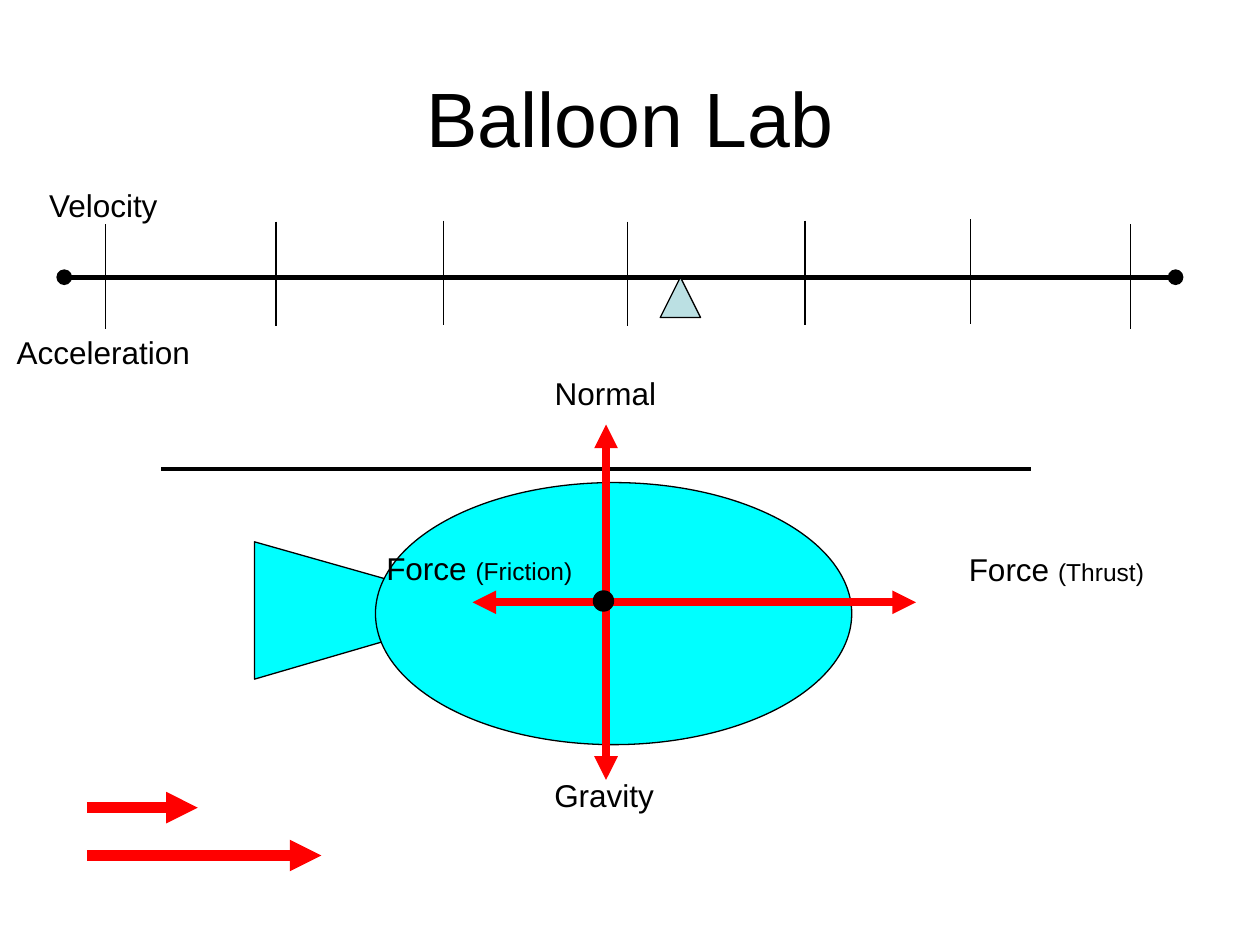
import pptx
import pptx.util
import pptx.dml.color
import pptx.enum.shapes
import pptx.enum.text
import pptx.oxml

COLORS = {"ink": "000000", "balloon": "00FFFF", "force": "FF0000", "marker": "BBE0E3"}
SHAPES = pptx.enum.shapes.MSO_SHAPE
CENTER = pptx.enum.text.PP_ALIGN.CENTER
MIDDLE = pptx.enum.text.MSO_ANCHOR.MIDDLE
rgb = {name: pptx.dml.color.RGBColor.from_string(value) for name, value in COLORS.items()}

deck = pptx.Presentation()
deck.slide_width = pptx.util.Inches(10)
deck.slide_height = pptx.util.Inches(7.5)
slide = deck.slides.add_slide(deck.slide_layouts[5])

# Grid: 100 columns by 75 rows
COL = deck.slide_width / 100
ROW = deck.slide_height / 75


def grid(*numbers):
    """Turn alternating columns and rows into lengths."""
    return [round(n * (ROW if i % 2 else COL)) for i, n in enumerate(numbers)]


def add_line(start, end, color, weight, head=None, tail=None):
    line = slide.shapes.add_connector(
        pptx.enum.shapes.MSO_CONNECTOR.STRAIGHT, *grid(*start, *end))
    line.line.color.rgb = rgb[color]
    line.line.width = pptx.util.Pt(weight)
    outline = line.line._get_or_add_ln()
    for tag, kind in (("headEnd", head), ("tailEnd", tail)):
        if kind:
            outline.append(pptx.oxml.parse_xml(
                '<a:%s xmlns:a="http://schemas.openxmlformats.org/drawingml/2006/main" '
                'type="%s"/>' % (tag, kind)))
    line._element.spPr.append(pptx.oxml.parse_xml(
        '<a:effectLst xmlns:a="http://schemas.openxmlformats.org/drawingml/2006/main"/>'))


# Title
title = slide.shapes.title
title.left, title.top, title.width, title.height = grid(5, 3, 90, 12.5)
title.text_frame.text = "Balloon Lab"
title.text_frame.vertical_anchor = MIDDLE
heading = title.text_frame.paragraphs[0]
heading.alignment = CENTER
heading.font.name = "Arial"
heading.font.size = pptx.util.Pt(44)
heading.font.color.rgb = rgb["ink"]

# Balloon: nozzle behind, body in front
nozzle_path = slide.shapes.build_freeform(*grid(20.2, 53.9), scale=1.0)
nozzle_path.add_line_segments(
    [grid(*point) for point in ((32.2, 50.4), (32.2, 46.4), (20.2, 43))], close=True)
nozzle = nozzle_path.convert_to_shape()
body = slide.shapes.add_shape(SHAPES.OVAL, *grid(29.8, 38.3, 37.8, 20.8))

# Ceiling and forces on the balloon
add_line((12.8, 37.2), (81.8, 37.2), "ink", 2.25)
add_line((37.5, 47.8), (72.7, 47.8), "force", 4.5, "triangle", "triangle")
add_line((48.1, 33.7), (48.1, 61.9), "force", 4.5, "triangle", "triangle")
mass_center = slide.shapes.add_shape(SHAPES.OVAL, *grid(47.1, 46.9, 1.6, 1.6))

# Velocity and acceleration scale
add_line((5.1, 22), (93.3, 22), "ink", 3, "oval", "oval")
for column, top in ((8.4, 17.8), (21.9, 17.6), (35.2, 17.5), (49.8, 17.6),
                    (63.9, 17.5), (77, 17.4), (89.7, 17.8)):
    add_line((column, top), (column, top + 8.3), "ink", 0.75)
marker = slide.shapes.add_shape(SHAPES.ISOSCELES_TRIANGLE, *grid(52.4, 22, 3.2, 3.2))

for part, color in ((nozzle, "balloon"), (body, "balloon"),
                    (mass_center, "ink"), (marker, "marker")):
    part.shadow.inherit = False
    part.fill.solid()
    part.fill.fore_color.rgb = rgb[color]
    part.line.color.rgb = rgb["ink"]
    part.line.width = pptx.util.Pt(0.75)

# Comparison arrows
for row, end in ((64.1, 15.7), (67.9, 25.5)):
    add_line((6.9, row), (end, row), "force", 6, tail="triangle")

# Labels: word, smaller note, left, top, width, wrap
for word, note, left, top, width, wrap in (
        ("Velocity", "", 2.7, 14.3, 11, True),
        ("Acceleration", "", 0.3, 25.9, 15.8, True),
        ("Normal", "", 43, 29.2, 10.1, False),
        ("Gravity", "", 43, 61.1, 9.9, False),
        ("Force ", "(Friction)", 26.9, 43.1, 22.3, True),
        ("Force ", "(Thrust)", 72.7, 43.2, 22.3, True)):
    label = slide.shapes.add_textbox(*grid(left, top, width, 4)).text_frame
    label.word_wrap = wrap
    label.auto_size = pptx.enum.text.MSO_AUTO_SIZE.SHAPE_TO_FIT_TEXT
    caption = label.paragraphs[0]
    caption.alignment = CENTER
    caption.font.name = "Arial"
    caption.font.size = pptx.util.Pt(18)
    caption.font.color.rgb = rgb["ink"]
    caption.add_run().text = word
    if note:
        remark = caption.add_run()
        remark.text = note
        remark.font.size = pptx.util.Pt(14)

deck.save("out.pptx")
